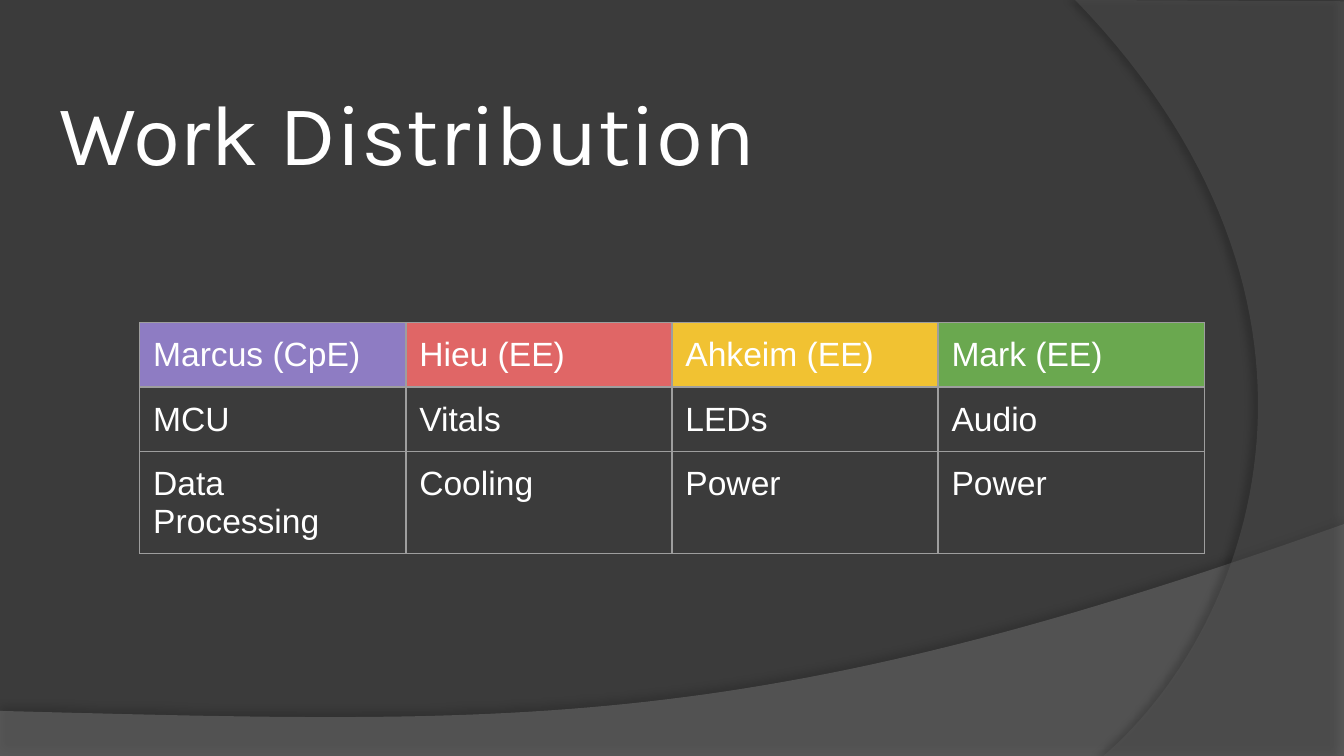
from dataclasses import dataclass

from lxml import etree
from pptx import Presentation
from pptx.dml.color import RGBColor
from pptx.enum.text import MSO_ANCHOR, MSO_AUTO_SIZE, PP_ALIGN
from pptx.oxml.ns import qn
from pptx.util import Inches, Pt

TOP = MSO_ANCHOR.TOP
NO_AUTOFIT = MSO_AUTO_SIZE.NONE
LEFT = PP_ALIGN.LEFT

WIDTH = 10
HEIGHT = WIDTH * 9 / 16
INSET = 0.1
CURVE_STEPS = 60
TITLE_ONLY = 5


@dataclass(frozen=True)
class Theme:
    background: str = "3B3B3B"
    text: str = "FFFFFF"
    border: str = "9E9E9E"
    lower_wave: str = "7B7B7B"
    right_wave: str = "5A5A5A"
    shadow: str = "000000"
    members: tuple = ("8E7CC3", "E06666", "F1C232", "6AA84F")
    title_font: str = "Karla"
    table_font: str = "Arial"
    title_size: int = 46
    table_size: int = 18
    border_width: float = 0.75


THEME = Theme()

WORK = (
    ("Marcus (CpE)", "Hieu (EE)", "Ahkeim (EE)", "Mark (EE)"),
    ("MCU", "Vitals", "LEDs", "Audio"),
    ("Data Processing", "Cooling", "Power", "Power"),
)


def add_color(parent, color, opacity=100):
    rgb = etree.SubElement(parent, qn("a:srgbClr"), val=color)
    if opacity < 100:
        etree.SubElement(rgb, qn("a:alpha"), val=str(opacity * 1000))


def bezier(start, control_1, control_2, end):
    points = []
    for step in range(CURVE_STEPS + 1):
        t = step / CURVE_STEPS
        u = 1 - t
        points.append(tuple(
            u**3 * a + 3 * u * u * t * b + 3 * u * t * t * c + t**3 * d
            for a, b, c, d in zip(start, control_1, control_2, end)
        ))
    return points


def add_wave(slide, layer, outline, color, opacity, shadow_opacity, distance, angle):
    start, *rest = [(Inches(x), Inches(y)) for x, y in outline]
    builder = slide.shapes.build_freeform(*start)
    builder.add_line_segments(rest)
    wave = builder.convert_to_shape()
    wave.fill.solid()
    wave.fill.fore_color.rgb = RGBColor.from_string(color)
    fill_color = wave._element.spPr.find(qn("a:solidFill")).find(qn("a:srgbClr"))
    etree.SubElement(fill_color, qn("a:alpha"), val=str(opacity * 1000))
    wave.line.fill.background()
    wave.shadow.inherit = False
    effects = wave._element.spPr.find(qn("a:effectLst"))
    shadow = etree.SubElement(
        effects, qn("a:outerShdw"), blurRad=str(Pt(4)), dist=str(Pt(distance)),
        dir=str(angle * 60000), algn="ctr", rotWithShape="0",
    )
    add_color(shadow, THEME.shadow, shadow_opacity)
    slide.shapes._spTree.insert(2 + layer, wave._element)


def write(frame, text, font, size):
    paragraph = frame.paragraphs[0]
    paragraph.alignment = LEFT
    run = paragraph.add_run()
    run.text = text
    run.font.name = font
    run.font.size = Pt(size)
    run.font.color.rgb = RGBColor.from_string(THEME.text)


def set_insets(box):
    box.margin_left = box.margin_right = Inches(INSET)
    box.margin_top = box.margin_bottom = Inches(INSET)
    box.vertical_anchor = TOP


def add_title(slide, text):
    title = slide.shapes.title
    title.left, title.top = Inches(0.34), Inches(0.49)
    title.width, title.height = Inches(WIDTH - 2 * 0.34), Inches(0.63)
    frame = title.text_frame
    frame.word_wrap = True
    frame.auto_size = NO_AUTOFIT
    set_insets(frame)
    write(frame, text, THEME.title_font, THEME.title_size)


def add_borders(cell):
    properties = cell._tc.get_or_add_tcPr()
    for side in ("lnL", "lnR", "lnT", "lnB"):
        line = etree.SubElement(
            properties, qn(f"a:{side}"), w=str(Pt(THEME.border_width))
        )
        add_color(etree.SubElement(line, qn("a:solidFill")), THEME.border)


def add_work_table(slide, rows):
    columns = len(rows[0])
    table = slide.shapes.add_table(
        len(rows), columns, Inches(1.04), Inches(2.4),
        Inches(1.98 * columns), Inches(0.42 * len(rows)),
    ).table
    table.first_row = False
    table.horz_banding = False
    for row, tasks in enumerate(rows):
        for column, task in enumerate(tasks):
            cell = table.cell(row, column)
            set_insets(cell)
            add_borders(cell)
            if row == 0:
                cell.fill.solid()
                cell.fill.fore_color.rgb = RGBColor.from_string(THEME.members[column])
            else:
                cell.fill.background()
            write(cell.text_frame, task, THEME.table_font, THEME.table_size)


def main():
    deck = Presentation()
    deck.slide_width, deck.slide_height = Inches(WIDTH), Inches(HEIGHT)
    slide = deck.slides.add_slide(deck.slide_layouts[TITLE_ONLY])
    slide.background.fill.solid()
    slide.background.fill.fore_color.rgb = RGBColor.from_string(THEME.background)

    lower_edge = bezier((WIDTH, 3.9), (5.59, 5.47), (3.91, 5.39), (0, 5.29))
    right_edge = bezier((8.21, HEIGHT), (9.35, 4.64), (10.18, 2.25), (8, 0))
    add_wave(slide, 0, [(0, HEIGHT), (WIDTH, HEIGHT), *lower_edge],
             THEME.lower_wave, 45, 35, 3.5, 270)
    add_wave(slide, 1, [(WIDTH, 0.01), (WIDTH, HEIGHT), *right_edge],
             THEME.right_wave, 40, 45, 4, 180)
    add_title(slide, "Work Distribution")
    add_work_table(slide, WORK)
    deck.save("out.pptx")


if __name__ == "__main__":
    main()
